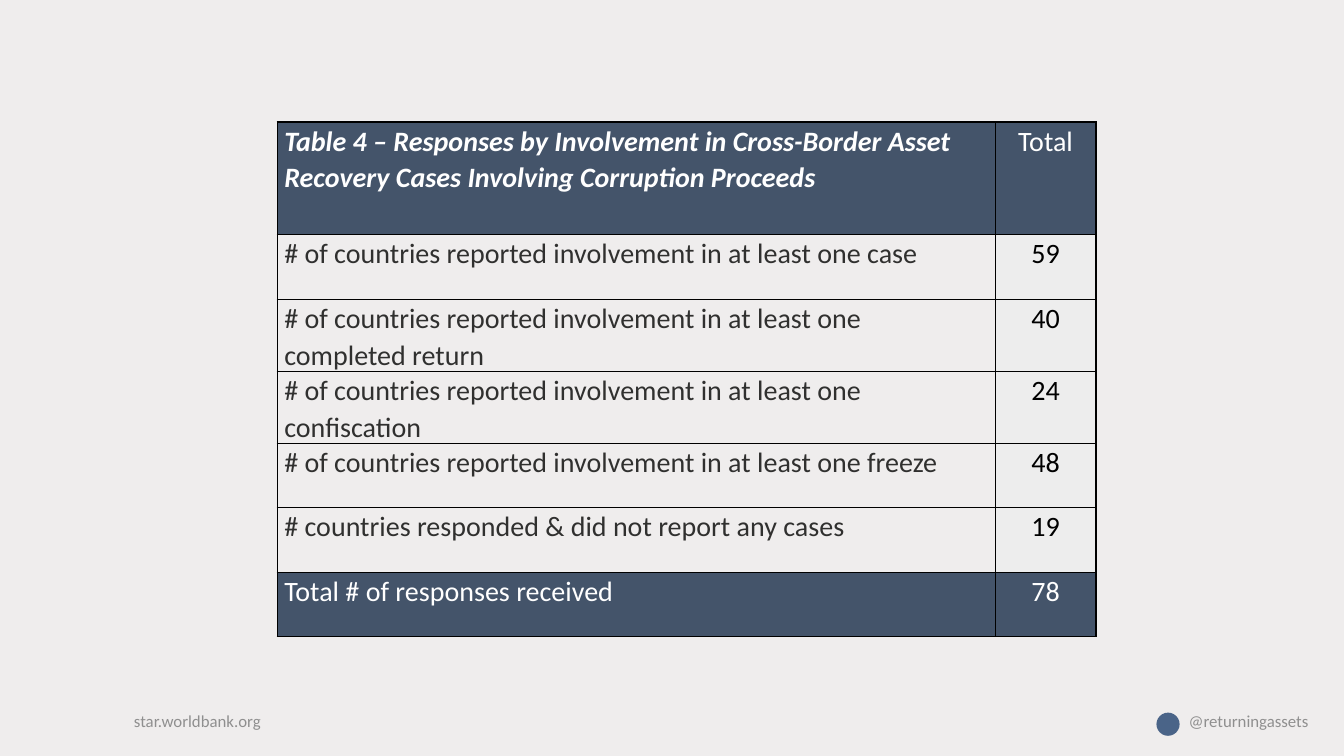
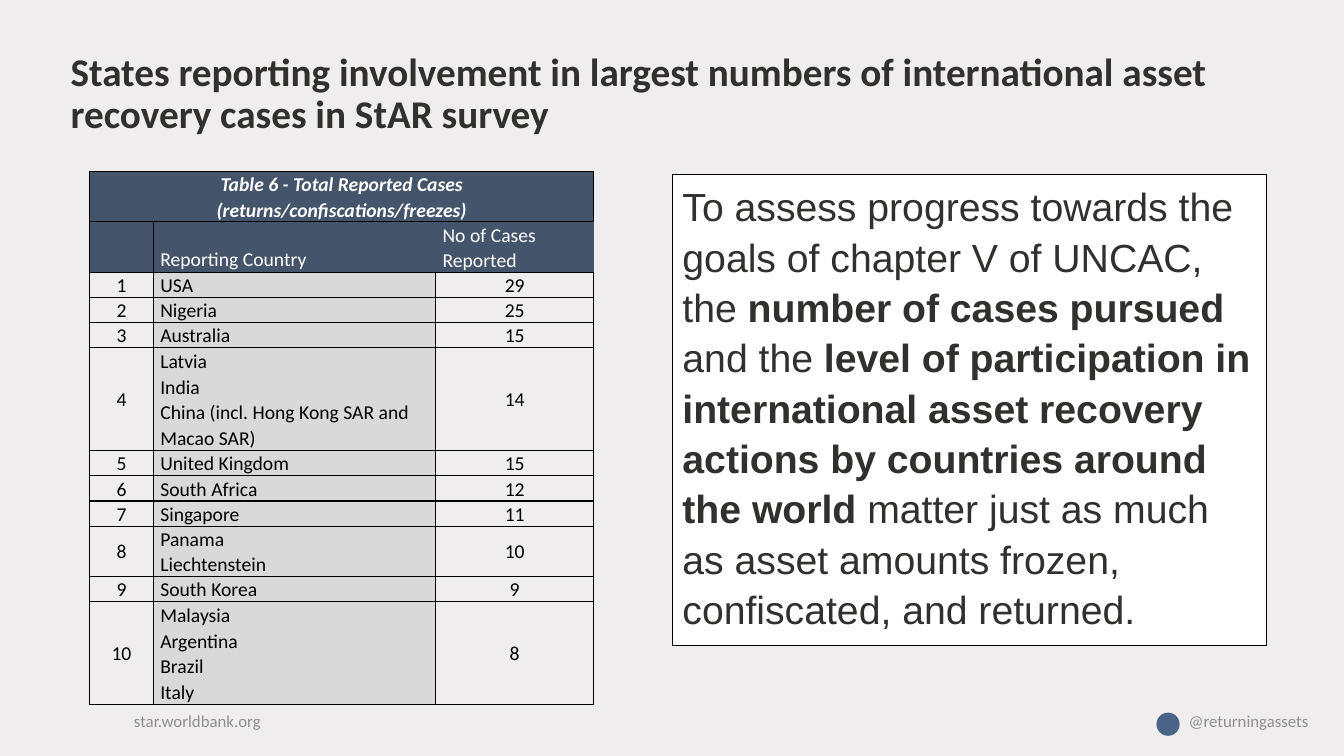
from lxml import etree
from pptx import Presentation
from pptx.dml.color import RGBColor
from pptx.enum.shapes import MSO_SHAPE
from pptx.enum.text import MSO_ANCHOR, MSO_AUTO_SIZE, PP_ALIGN
from pptx.oxml import parse_xml
from pptx.oxml.ns import nsdecls
from pptx.util import Inches, Pt

LEFT, CENTER = PP_ALIGN.LEFT, PP_ALIGN.CENTER
TOP, MIDDLE, BOTTOM = MSO_ANCHOR.TOP, MSO_ANCHOR.MIDDLE, MSO_ANCHOR.BOTTOM
TITLE_ONLY, BLANK = 5, 6

BACKGROUND = RGBColor(0xEF, 0xED, 0xED)
NAVY = RGBColor(0x44, 0x54, 0x6A)
BADGE_BLUE = RGBColor(0x4A, 0x64, 0x88)
INK = RGBColor(0x30, 0x30, 0x2F)
FOOTER_GRAY = RGBColor(0x8F, 0x8F, 0x8F)
LIGHT_GRAY = RGBColor(0xED, 0xED, 0xED)
MID_GRAY = RGBColor(0xD9, 0xD9, 0xD9)
WHITE = RGBColor(0xFF, 0xFF, 0xFF)
BLACK = RGBColor(0x00, 0x00, 0x00)

HEADING = {"bold": True, "italic": True}


def style_text(frame, size, color, align=LEFT, spacing=1.0, name="Calibri", **font_values):
    values = {"size": Pt(size), "name": name, "bold": False, **font_values}
    for para in frame.paragraphs:
        para.alignment = align
        para.line_spacing = spacing
        for span in para.runs:
            span.font.color.rgb = color
            for key, value in values.items():
                setattr(span.font, key, value)


def fill_cell(cell, text, size, color, fill=None, align=LEFT, anchor=TOP,
              borders="LRTB", **font_values):
    """Write one table cell; sides missing from borders get no line."""
    cell.margin_left = cell.margin_right = Inches(0.07)
    cell.margin_top = cell.margin_bottom = 0
    cell.vertical_anchor = anchor
    cell.text = text
    style_text(cell.text_frame, size, color, align, 1.07, **font_values)
    properties = cell._tc.get_or_add_tcPr()
    for side in "LRTB":
        line = parse_xml(f'<a:ln{side} {nsdecls("a")} w="{Pt(1)}"/>')
        if side in borders:
            line.append(parse_xml(
                f'<a:solidFill {nsdecls("a")}><a:srgbClr val="{BLACK}"/></a:solidFill>'))
        else:
            etree.SubElement(line, line.tag.replace("ln" + side, "noFill"))
        properties.append(line)
    if fill is None:
        cell.fill.background()
    else:
        cell.fill.solid()
        cell.fill.fore_color.rgb = fill


deck = Presentation()
deck.slide_width, deck.slide_height = Inches(13.33), Inches(7.5)
master_fill = deck.slide_master.background.fill
master_fill.solid()
master_fill.fore_color.rgb = BACKGROUND

page_responses = deck.slides.add_slide(deck.slide_layouts[BLANK])
page_states = deck.slides.add_slide(deck.slide_layouts[TITLE_ONLY])

# Footer on every page
for page in deck.slides:
    for text, left, width in (("star.worldbank.org", 1.23, 2.15),
                              ("@returningassets", 11.69, 1.61)):
        box = page.shapes.add_textbox(Inches(left), Inches(6.95), Inches(width), Inches(0.4))
        box.text_frame.word_wrap = True
        box.text_frame.vertical_anchor = MIDDLE
        box.text_frame.text = text
        style_text(box.text_frame, 12, FOOTER_GRAY)
    badge = page.shapes.add_shape(MSO_SHAPE.OVAL, Inches(11.47), Inches(7.07),
                                  Inches(0.23), Inches(0.23))
    badge.shadow.inherit = False
    badge.fill.solid()
    badge.fill.fore_color.rgb = BADGE_BLUE
    badge.line.fill.background()

# Responses by involvement
responses = [
    ("Table 4 – Responses by Involvement in Cross-Border Asset Recovery Cases "
     "Involving Corruption Proceeds", "Total"),
    ("# of countries reported involvement in at least one case", "59"),
    ("# of countries reported involvement in at least one completed return", "40"),
    ("# of countries reported involvement in at least one confiscation", "24"),
    ("# of countries reported involvement in at least one freeze", "48"),
    ("# countries responded & did not report any cases", "19"),
    ("Total # of responses received", "78"),
]
table = page_responses.shapes.add_table(
    len(responses), 2, Inches(2.75), Inches(1.21), Inches(8.12), Inches(4.96)).table
for column, width in zip(table.columns, (7.12, 1)):
    column.width = Inches(width)
for index, (label, total) in enumerate(responses):
    table.rows[index].height = Inches(0.64 if index else 1.12)
    label_cell, total_cell = table.rows[index].cells
    if index in (0, len(responses) - 1):
        label_font = {} if index else HEADING
        fill_cell(label_cell, label, 20, WHITE, NAVY, **label_font)
        fill_cell(total_cell, total, 20, WHITE, NAVY, CENTER)
    else:
        fill_cell(label_cell, label, 20, INK)
        fill_cell(total_cell, total, 20, BLACK, LIGHT_GRAY, CENTER)

# States with the most cases
title = page_states.shapes.title
title.left, title.top = Inches(0.6), Inches(0.54)
title.width, title.height = Inches(11.5), Inches(0.8)
title.text_frame.text = ("States reporting involvement in largest numbers of international "
                         "asset recovery cases in StAR survey")
title.text_frame.auto_size = MSO_AUTO_SIZE.NONE
title.text_frame.vertical_anchor = MIDDLE
style_text(title.text_frame, 28, INK, spacing=0.9, bold=True)

countries = [
    ("USA", 29),
    ("Nigeria", 25),
    ("Australia", 15),
    ("Latvia\nIndia\nChina (incl. Hong Kong SAR and Macao SAR)", 14),
    ("United Kingdom", 15),
    ("South Africa", 12),
    ("Singapore", 11),
    ("Panama\nLiechtenstein", 10),
    ("South Korea", 9),
    ("Malaysia\nArgentina\nBrazil\nItaly", 8),
]
row_heights = [0.5, 0.5, 0.25, 0.25, 0.25, 1.02, 0.25, 0.25, 0.25, 0.5, 0.25, 1.02]
table = page_states.shapes.add_table(
    len(row_heights), 3, Inches(0.89), Inches(1.7), Inches(5), Inches(5.26)).table
for column, width in zip(table.columns, (0.63, 2.8, 1.57)):
    column.width = Inches(width)
for row, height in zip(table.rows, row_heights):
    row.height = Inches(height)

table.cell(0, 0).merge(table.cell(0, 2))
for column_index in range(3):
    text = "" if column_index else "Table 6 - Total Reported Cases (returns/confiscations/freezes)"
    fill_cell(table.cell(0, column_index), text, 14, WHITE, NAVY, CENTER, BOTTOM, **HEADING)
for column_index, (text, borders) in enumerate((
        ("", "LRTB"), ("Reporting Country", "LTB"), ("No of Cases Reported", "TB"))):
    fill_cell(table.cell(1, column_index), text, 14, WHITE, NAVY, anchor=BOTTOM, borders=borders)
for rank, (names, cases) in enumerate(countries, start=1):
    rank_cell, names_cell, cases_cell = table.rows[rank + 1].cells
    fill_cell(rank_cell, str(rank), 14, BLACK, align=CENTER, anchor=MIDDLE)
    fill_cell(names_cell, names, 14, BLACK, MID_GRAY, anchor=BOTTOM)
    fill_cell(cases_cell, str(cases), 14, BLACK, align=CENTER, anchor=MIDDLE)

# Message beside the table
message = page_states.shapes.add_shape(MSO_SHAPE.RECTANGLE, Inches(6.67), Inches(1.73),
                                       Inches(5.89), Inches(4.67))
message.shadow.inherit = False
message.fill.solid()
message.fill.fore_color.rgb = WHITE
message.line.color.rgb = BLACK
message.line.width = Pt(0.75)
message.text_frame.word_wrap = True
message.text_frame.vertical_anchor = TOP
para = message.text_frame.paragraphs[0]
for text in (
        "To assess progress towards the goals of chapter V of UNCAC, the ",
        "number of cases pursued ",
        "and the ",
        "level of participation in international asset recovery actions by countries "
        "around the world",
        " matter just as much as asset amounts frozen, confiscated, and returned."):
    para.add_run().text = text
style_text(message.text_frame, 28, INK, spacing=1.07, name="Arial")
para.space_after = Pt(8)
for span in para.runs[1::2]:
    span.font.bold = True

deck.save("out.pptx")
